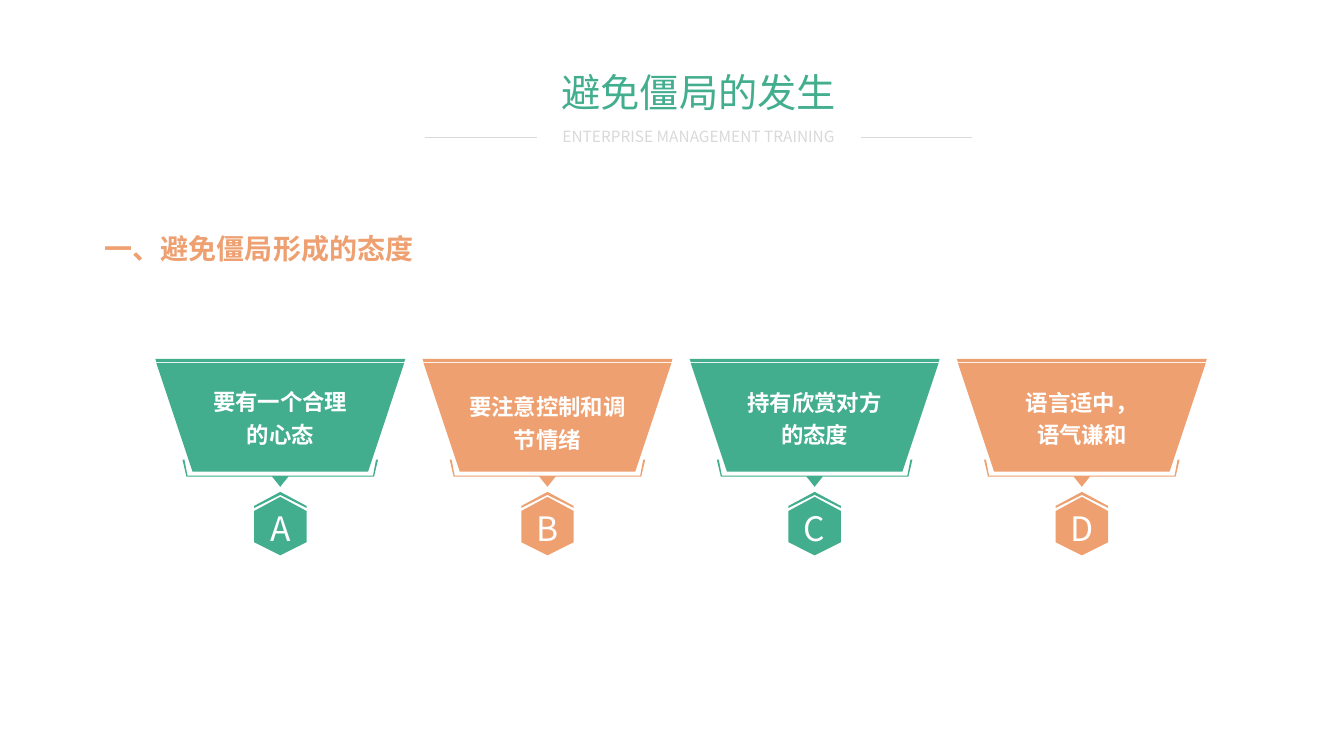
import pptx
import pptx.util
from pptx.dml.color import RGBColor
from pptx.enum.shapes import MSO_CONNECTOR
from pptx.enum.text import MSO_ANCHOR, PP_ALIGN
from pptx.oxml.ns import qn

PX = 9144  # 100 px to the inch
FONT = "Noto Sans CJK SC"
GREEN = RGBColor(0x42, 0xAE, 0x8E)
ORANGE = RGBColor(0xEE, 0xA0, 0x71)
GREY = RGBColor(0xD9, 0xD9, 0xD9)
WHITE = RGBColor(0xFF, 0xFF, 0xFF)

FIRST_CENTER, PITCH = 278, 265
CARDS = [
    ("A", GREEN, 372, ["要有一个合理", "的心态"]),
    ("B", ORANGE, 377, ["要注意控制和调节情绪"]),
    ("C", GREEN, 373, ["持有欣赏对方", "的态度"]),
    ("D", ORANGE, 373, ["语言适中，", "语气谦和"]),
]

# Outlines: x from the card's centre line, y from the top of the slide
TRAY = [[(-97, 456), (-95, 456), (-92, 472), (92, 472), (95, 456), (97, 456),
         (93, 473), (8, 473), (0, 483), (-8, 473), (-93, 473)]]
BADGE = [[(0, 493), (26, 507), (26, 538), (0, 551), (-26, 538), (-26, 507)],
         [(0, 488), (26, 502), (26, 504), (0, 491), (-26, 504), (-26, 502)]]
PANEL = [[(-123, 360), (123, 360), (87, 468), (-87, 468)],
         [(-124, 356), (124, 356), (123, 359), (-123, 359)]]


def write(frame, lines, size, color, bold=False, align=PP_ALIGN.CENTER, spacing=None):
    frame.word_wrap = True
    for index, line in enumerate(lines):
        paragraph = frame.paragraphs[0] if index == 0 else frame.add_paragraph()
        paragraph.text = line
        paragraph.alignment = align
        paragraph.line_spacing = spacing
        font = paragraph.font
        font.name, font.size, font.bold = FONT, pptx.util.Pt(size), bold
        font.color.rgb = color
        # East Asian glyphs take their typeface from a:ea
        east_asian = paragraph.runs[0].font
        east_asian.name = FONT
        latin = east_asian._element.find(qn("a:latin"))
        ea = latin.makeelement(qn("a:ea"), {"typeface": FONT})
        latin.addnext(ea)


def add_text(slide, left, top, width, height, lines, size, color, **style):
    box = slide.shapes.add_textbox(left * PX, top * PX, width * PX, height * PX)
    write(box.text_frame, lines, size, color, **style)
    return box.text_frame


def add_rule(slide, left, right, y):
    rule = slide.shapes.add_connector(
        MSO_CONNECTOR.STRAIGHT, left * PX, y * PX, right * PX, y * PX)
    rule.line.color.rgb = GREY
    rule.line.width = pptx.util.Pt(0.5)
    properties = rule._element.spPr
    properties.append(properties.makeelement(qn("a:effectLst"), {}))


def add_outline(slide, center, contours, color):
    """Fill closed contours, given around a vertical centre line, as one shape."""
    start, *rest = contours[0]
    builder = slide.shapes.build_freeform(*start, scale=PX)
    builder.add_line_segments(rest, close=True)
    for start, *rest in contours[1:]:
        builder.move_to(*start)
        builder.add_line_segments(rest, close=True)
    outline = builder.convert_to_shape(center * PX, 0)
    outline.fill.solid()
    outline.fill.fore_color.rgb = color
    outline.line.fill.background()
    outline.shadow.inherit = False
    return outline


def add_card(slide, center, letter, color, label_top, label):
    add_outline(slide, center, TRAY, color)
    badge = add_outline(slide, center, BADGE, color).text_frame
    badge.margin_left = badge.margin_right = 0
    badge.vertical_anchor = MSO_ANCHOR.MIDDLE
    write(badge, [letter], 24, WHITE, spacing=1.2)
    add_outline(slide, center, PANEL, color)
    frame = add_text(slide, center - 97, label_top, 194, 80, label, 16, WHITE,
                     bold=True, spacing=1.2)
    frame.vertical_anchor = MSO_ANCHOR.MIDDLE


def main():
    deck = pptx.Presentation()
    deck.slide_width, deck.slide_height = 1333 * PX, 750 * PX
    slide = deck.slides.add_slide(deck.slide_layouts[6])

    add_text(slide, 532, 121, 322, 29, ["ENTERPRISE MANAGEMENT TRAINING"], 11, GREY)
    add_rule(slide, 422, 533, 136)
    add_rule(slide, 854, 964, 136)
    add_text(slide, 536, 63, 314, 57, ["避免僵局的发生"], 28, GREEN)
    add_text(slide, 94, 225, 675, 44, ["一、避免僵局形成的态度"], 20, ORANGE,
             bold=True, align=PP_ALIGN.LEFT)
    for index, card in enumerate(CARDS):
        add_card(slide, FIRST_CENTER + index * PITCH, *card)

    deck.save("out.pptx")


if __name__ == "__main__":
    main()
